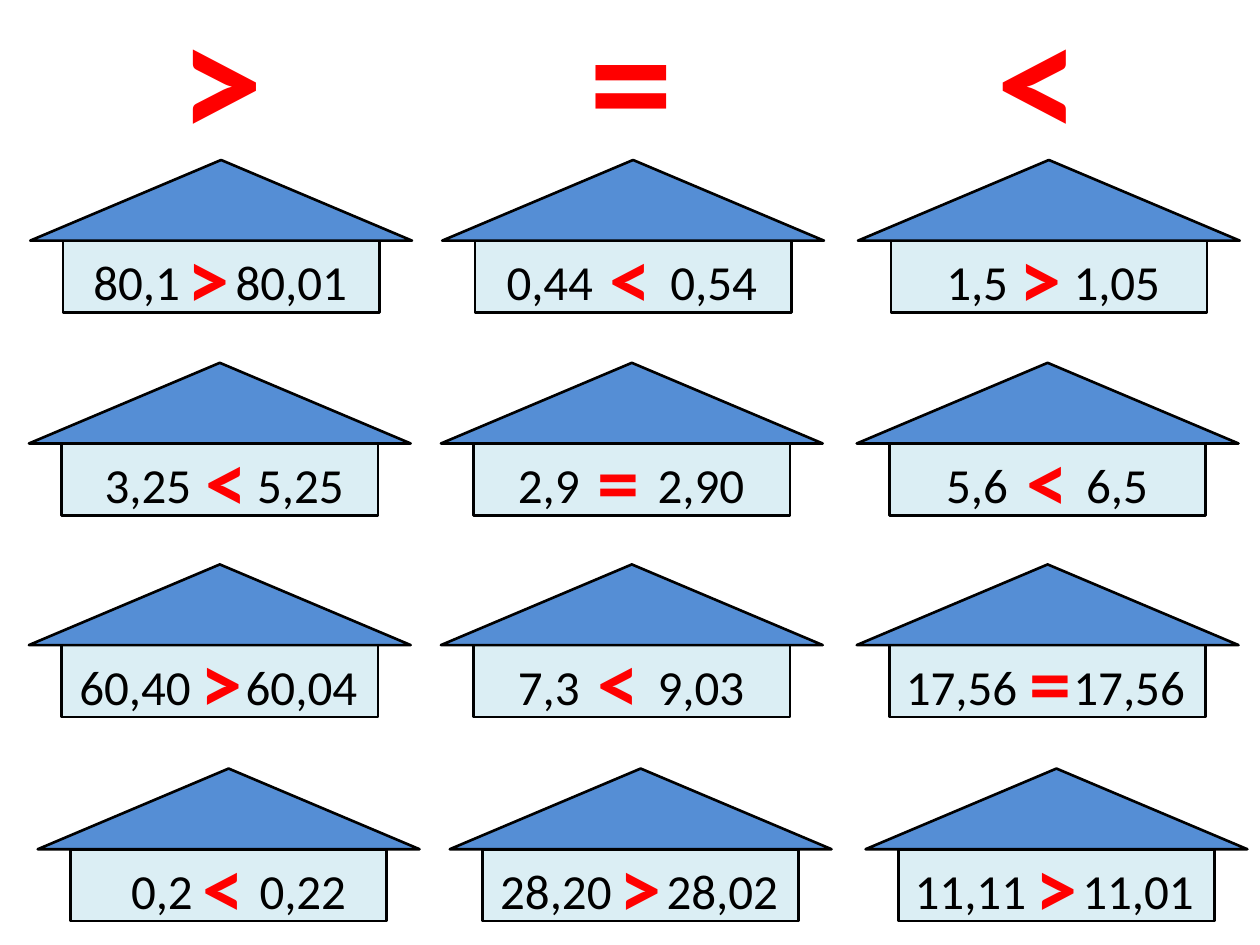
import pptx
import pptx.util
import pptx.dml.color
import pptx.enum.shapes
import pptx.enum.text
import pptx.oxml
import pptx.oxml.ns

Inches = pptx.util.Inches
Pt = pptx.util.Pt
RGBColor = pptx.dml.color.RGBColor
MSO_SHAPE = pptx.enum.shapes.MSO_SHAPE

WALL_BLUE = RGBColor(0xDB, 0xEE, 0xF4)
ROOF_BLUE = RGBColor(0x55, 0x8E, 0xD5)
BLACK = RGBColor(0, 0, 0)
RED = RGBColor(0xFF, 0, 0)

WALL_WIDTH, WALL_HEIGHT = 2.51, 0.57
ROOF_WIDTH, ROOF_HEIGHT = 3.03, 0.64
EAVE = (ROOF_WIDTH - WALL_WIDTH) / 2
SIGN_RISE = 0.17  # how far a sign's box starts above its wall

COLUMN_OFFSETS = [0, 3.27, 6.57]

# Left edge and top of the first roof in each row; then, for each house,
# left number, sign, right number and their starts within the wall.
STREETS = [
    (0.24, 1.27, [("80,1", ">", "80,01", 0.24, 0.89, 1.37),
                  ("0,44", "<", "0,54", 0.25, 0.97, 1.55),
                  ("1,5", ">", "1,05", 0.44, 0.92, 1.45)]),
    (0.23, 2.88, [("3,25", "<", "5,25", 0.34, 1.04, 1.55),
                  ("2,9", "=", "2,90", 0.35, 0.88, 1.46),
                  ("5,6", "<", "6,5", 0.45, 0.99, 1.56)]),
    (0.23, 4.48, [("60,40", ">", "60,04", 0.14, 1, 1.46),
                  ("7,3", "<", "9,03", 0.35, 0.88, 1.46),
                  ("17,56", "=", "17,56", 0.13, 1.01, 1.46)]),
    (0.3, 6.1, [("0,2", "<", "0,22", 0.48, 0.95, 1.5),
                ("28,20", ">", "28,02", 0.14, 0.99, 1.46),
                ("11,11", ">", "11,01", 0.13, 0.99, 1.46)]),
]

HEADINGS = [(">", 1.33), ("=", 4.58), ("<", 7.81)]


class HouseSlide:
    font_name = "Calibri"
    number_size = 28
    outline = Pt(1.5)

    def __init__(self, slide):
        self.slide = slide

    def run(self, paragraph, text, size, color, bold=False):
        run = paragraph.add_run()
        run.text = text
        run.font.name = self.font_name
        run.font.size = Pt(size)
        run.font.bold = bold
        run.font.color.rgb = color

    def block(self, group, preset, left, top, width, height, fill):
        block = group.shapes.add_shape(
            preset, Inches(left), Inches(top), Inches(width), Inches(height))
        block.shadow.inherit = False
        block.fill.solid()
        block.fill.fore_color.rgb = fill
        block.line.color.rgb = BLACK
        block.line.width = self.outline
        return block

    def numbers(self, wall, first, second, first_start, second_start):
        """Write two numbers on a wall, the second one at a tab stop."""
        frame = wall.text_frame
        frame.margin_left = Inches(first_start)
        frame.margin_right = 0
        frame.vertical_anchor = pptx.enum.text.MSO_ANCHOR.MIDDLE
        paragraph = frame.paragraphs[0]
        paragraph.alignment = pptx.enum.text.PP_ALIGN.LEFT
        paragraph.line_spacing = 1.15
        paragraph.space_after = Pt(10)
        gap = Inches(second_start - first_start)
        paragraph._p.get_or_add_pPr().append(pptx.oxml.parse_xml(
            f'<a:tabLst {pptx.oxml.ns.nsdecls("a")}>'
            f'<a:tab pos="{gap}" algn="l"/></a:tabLst>'))
        self.run(paragraph, f"{first}\t{second}", self.number_size, BLACK)

    def house(self, left, top, first, second, first_start, second_start):
        group = self.slide.shapes.add_group_shape()
        wall = self.block(group, MSO_SHAPE.RECTANGLE, left + EAVE,
                          top + ROOF_HEIGHT, WALL_WIDTH, WALL_HEIGHT, WALL_BLUE)
        self.numbers(wall, first, second, first_start, second_start)
        self.block(group, MSO_SHAPE.ISOSCELES_TRIANGLE, left, top,
                   ROOF_WIDTH, ROOF_HEIGHT, ROOF_BLUE)

    def sign(self, text, left, top, width, height, size):
        box = self.slide.shapes.add_textbox(
            Inches(left), Inches(top), Inches(width), Inches(height))
        frame = box.text_frame
        frame.word_wrap = False
        frame.auto_size = pptx.enum.text.MSO_AUTO_SIZE.SHAPE_TO_FIT_TEXT
        self.run(frame.paragraphs[0], text, size, RED, bold=True)


def main():
    deck = pptx.Presentation()
    deck.slide_width, deck.slide_height = Inches(10), Inches(7.5)
    page = HouseSlide(deck.slides.add_slide(deck.slide_layouts[6]))

    for text, left in HEADINGS:
        page.sign(text, left, -0.27, 0.87, 1.72, 96)

    for row_left, top, houses in STREETS:
        for offset, house in zip(COLUMN_OFFSETS, houses):
            first, sign, second, first_start, sign_start, second_start = house
            left = row_left + offset
            page.house(left, top, first, second, first_start, second_start)
            page.sign(sign, left + EAVE + sign_start,
                      top + ROOF_HEIGHT - SIGN_RISE, 0.54, 0.91, 48)

    deck.save("out.pptx")


if __name__ == "__main__":
    main()
